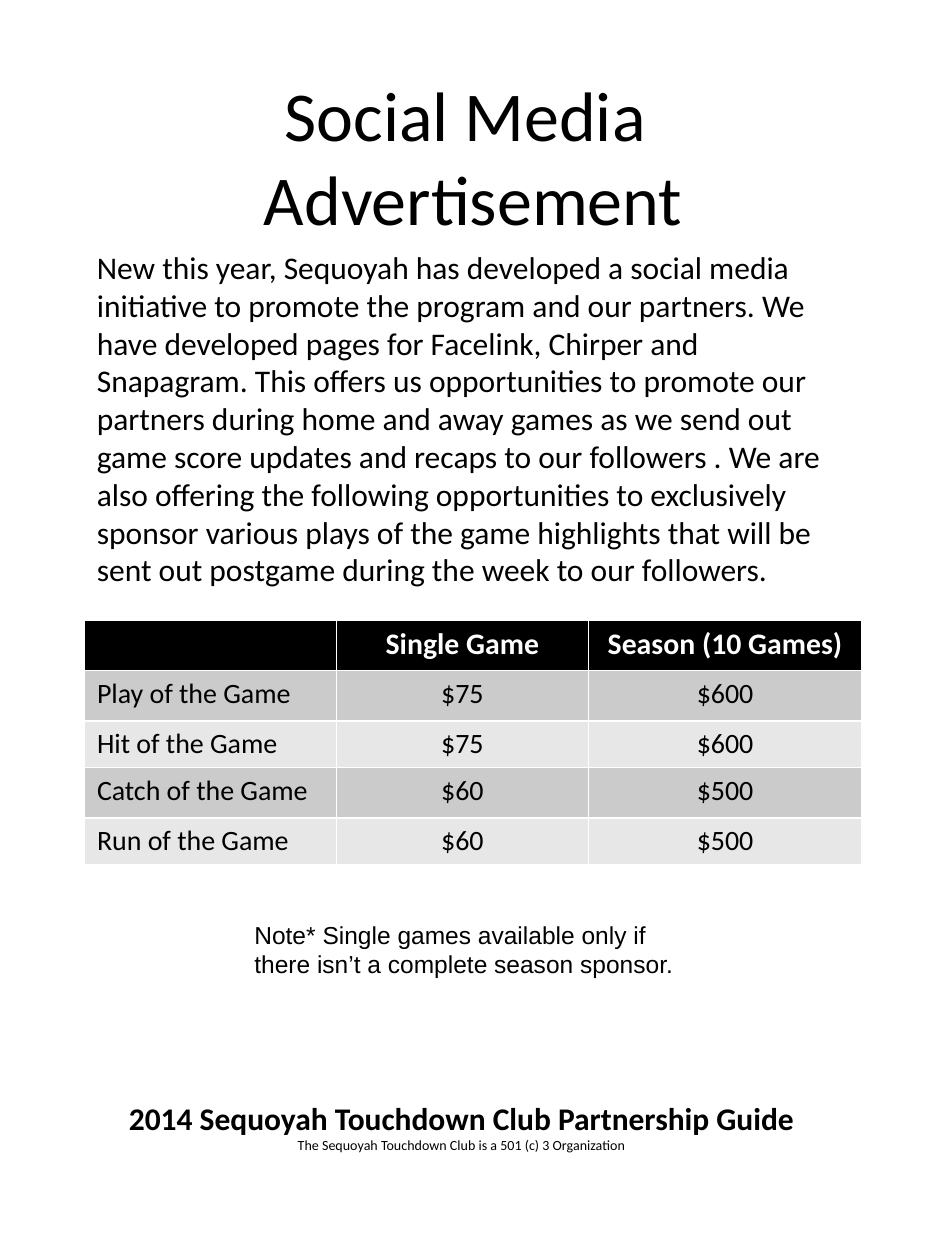
"""Build the social media advertisement page of a sponsorship guide."""
from dataclasses import dataclass

from pptx import Presentation
from pptx import util as u
from pptx.dml.color import RGBColor
from pptx.enum import text

COLOURS = {"ink": "000000", "paper": "FFFFFF", "odd": "CBCBCB", "even": "E7E7E7"}
WIDTH, HEIGHT = u.Inches(7.5), u.Inches(10)
LEFT, CENTRE = text.PP_ALIGN.LEFT, text.PP_ALIGN.CENTER


@dataclass
class Area:
    """A rectangle in inches."""
    left: float
    top: float
    width: float
    height: float

    def lengths(self) -> list:
        """Return the rectangle as slide lengths."""
        return [u.Inches(n) for n in (self.left, self.top, self.width, self.height)]


@dataclass
class Line:
    """A paragraph with its formatting."""
    words: str
    size: int
    align: text.PP_ALIGN = LEFT
    bold: bool = False
    font: str = "Calibri"
    colour: str = "ink"


def colour(name: str) -> RGBColor:
    """Look up a named colour."""
    return RGBColor.from_string(COLOURS[name])


def write(frame, lines: list[Line]) -> None:
    """Fill a text frame with formatted paragraphs."""
    for index, line in enumerate(lines):
        paragraph = frame.add_paragraph() if index else frame.paragraphs[0]
        paragraph.text = line.words
        paragraph.alignment = line.align
        for run in paragraph.runs:
            run.font.name, run.font.size = line.font, u.Pt(line.size)
            run.font.bold = line.bold
            run.font.color.rgb = colour(line.colour)


def add_text(slide, area: Area, *lines: Line) -> None:
    """Add a wrapping text box."""
    frame = slide.shapes.add_textbox(*area.lengths()).text_frame
    frame.word_wrap = True
    write(frame, list(lines))


def add_prices(slide, area: Area, columns: list[float], heights: list[float],
               rows: list[tuple]) -> None:
    """Add the price table with a dark header and grey bands."""
    table = slide.shapes.add_table(len(rows), len(columns), *area.lengths()).table
    for column, width in zip(table.columns, columns):
        column.width = u.Inches(width)
    for r, (row, height) in enumerate(zip(rows, heights)):
        table.rows[r].height = u.Inches(height)
        fill = "ink" if r == 0 else "odd" if r % 2 else "even"
        for c, words in enumerate(row):
            cell = table.cell(r, c)
            cell.fill.solid()
            cell.fill.fore_color.rgb = colour(fill)
            align = CENTRE if c else LEFT
            line = Line(words, 16, align) if r else Line(words, 17, align, True, colour="paper")
            write(cell.text_frame, [line])


def main() -> None:
    """Build and save the slide."""
    presentation = Presentation()
    presentation.slide_width, presentation.slide_height = WIDTH, HEIGHT
    slide = presentation.slides.add_slide(presentation.slide_layouts[5])

    title = slide.shapes.title
    title.left, title.top, title.width, title.height = Area(0.38, 0.4, 6.75, 1.67).lengths()
    title.text_frame.auto_size = text.MSO_AUTO_SIZE.NONE
    title.text_frame.vertical_anchor = text.MSO_ANCHOR.MIDDLE
    write(title.text_frame, [Line("Social Media \vAdvertisement", 40, CENTRE)])

    add_text(slide, Area(0.75, 8.67, 5.83, 0.54),
             Line("2014 Sequoyah Touchdown Club Partnership Guide", 18, CENTRE, True),
             Line("The Sequoyah Touchdown Club is a 501 (c) 3 Organization", 8, CENTRE))
    add_text(slide, Area(0.67, 1.92, 6.08, 2.8), Line(
        "New this year, Sequoyah has developed a social media initiative to promote the "
        "program and our partners. We have developed pages for Facelink, Chirper and "
        "Snapagram. This offers us opportunities to promote our partners during home and "
        "away games as we send out game score updates and recaps to our followers . We are "
        "also offering the following opportunities to exclusively sponsor various plays of "
        "the game highlights that will be sent out postgame during the week to our "
        "followers.", 18))
    add_prices(slide, Area(0.67, 4.92, 6.17, 1.94), [2, 2, 2.17],
               [0.4, 0.4, 0.37, 0.4, 0.37], [
                   ("", "Single Game", "Season (10 Games)"),
                   ("Play of the Game", "$75", "$600"),
                   ("Hit of the Game", "$75", "$600"),
                   ("Catch of the Game", "$60", "$500"),
                   ("Run of the Game", "$60", "$500")])
    add_text(slide, Area(1.92, 7.25, 3.58, 0.57), Line(
        "Note* Single games available only if there isn’t a complete season sponsor.",
        14, font="Arial"))
    presentation.save("out.pptx")


if __name__ == "__main__":
    main()
